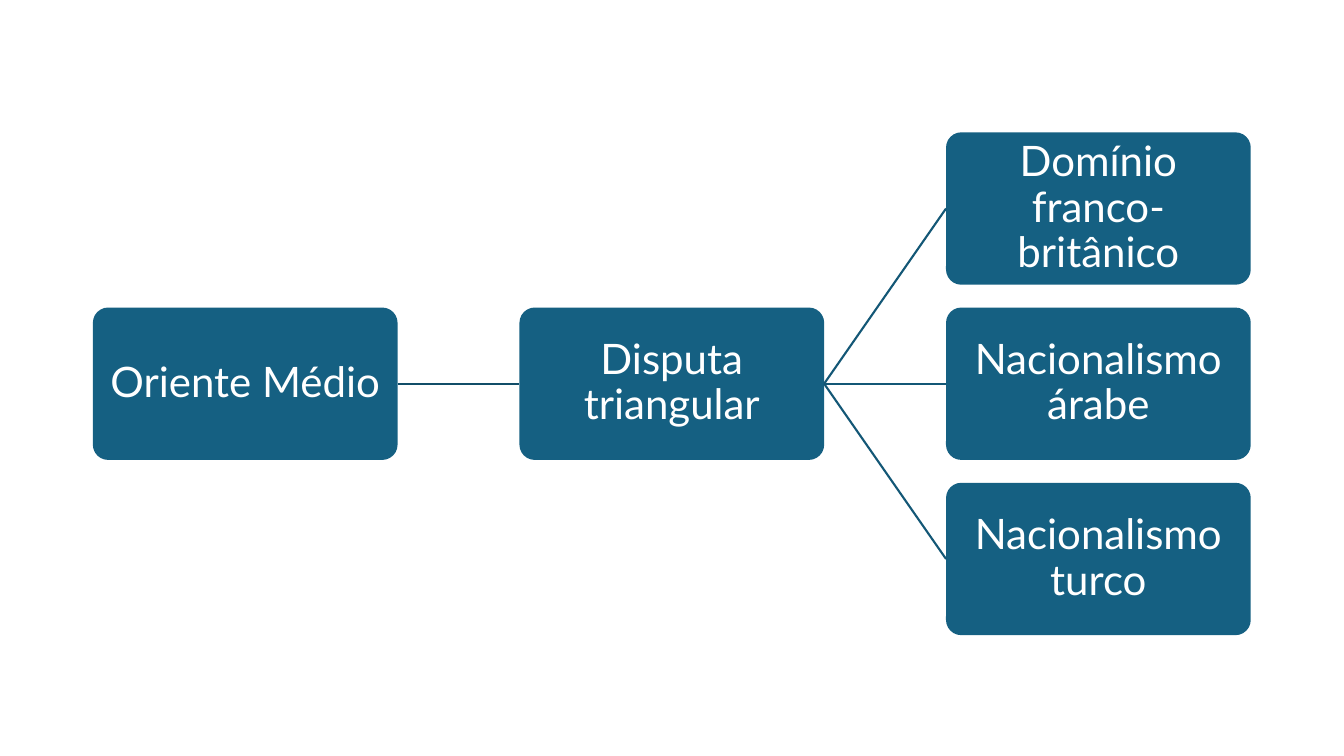
from dataclasses import dataclass

from lxml import etree
from pptx import Presentation
from pptx import util as u
from pptx.dml import color
from pptx.enum import shapes, text
from pptx.oxml import ns


@dataclass(frozen=True)
class Theme:
    fill: str = "156082"
    stem: str = "114D68"
    branch: str = "135776"
    ink: str = "FFFFFF"
    font: str = "Lato"
    size: float = 30
    line: float = 1.5


@dataclass(frozen=True)
class Box:
    left: float
    top: float
    width: float
    height: float


THEME = Theme()
ROOT = "Oriente Médio"
TOPIC = "Disputa triangular"
SIDES = ["Domínio franco-britânico", "Nacionalismo árabe", "Nacionalismo turco"]


def rgb(code):
    return color.RGBColor.from_string(code)


def add_card(slide, box, label):
    card = slide.shapes.add_shape(
        shapes.MSO_SHAPE.ROUNDED_RECTANGLE,
        u.Cm(box.left), u.Cm(box.top), u.Cm(box.width), u.Cm(box.height))
    card.adjustments[0] = 0.1
    card.shadow.inherit = False
    card.fill.solid()
    card.fill.fore_color.rgb = rgb(THEME.fill)
    card.line.fill.background()
    frame = card.text_frame
    frame.word_wrap = True
    frame.vertical_anchor = text.MSO_ANCHOR.MIDDLE
    frame.margin_left = frame.margin_right = u.Cm(0.05)
    frame.margin_top = frame.margin_bottom = u.Cm(0.05)
    frame.text = label
    para = frame.paragraphs[0]
    para.alignment = text.PP_ALIGN.CENTER
    para.line_spacing = 0.9
    font = para.runs[0].font
    font.name = THEME.font
    font.size = u.Pt(THEME.size)
    font.color.rgb = rgb(THEME.ink)
    return card


def add_link(slide, start, end, tone):
    link = slide.shapes.add_connector(shapes.MSO_CONNECTOR.STRAIGHT, 0, 0, 0, 0)
    link.begin_connect(start, 3)
    link.end_connect(end, 1)
    link.line.color.rgb = rgb(tone)
    link.line.width = u.Pt(THEME.line)
    etree.SubElement(link._element.spPr, ns.qn("a:effectLst"))


def add_tree(slide, box):
    wide = box.width / 3.8
    high = wide / 2
    step = wide * 1.4
    rise = high * 1.15
    middle = box.top + (box.height - high) / 2

    def place(col, row, label):
        spot = Box(box.left + col * step, middle + row * rise, wide, high)
        return add_card(slide, spot, label)

    root = place(0, 0, ROOT)
    topic = place(1, 0, TOPIC)
    add_link(slide, root, topic, THEME.stem)
    for row, label in enumerate(SIDES, start=-1):
        side = place(2, row, label)
        add_link(slide, topic, side, THEME.branch)


def main():
    deck = Presentation()
    deck.slide_width = u.Cm(33.87)
    deck.slide_height = u.Cm(19.05)
    slide = deck.slides.add_slide(deck.slide_layouts[6])
    add_tree(slide, Box(2.34, 3.33, 29.18, 12.68))
    deck.save("out.pptx")


if __name__ == "__main__":
    main()
